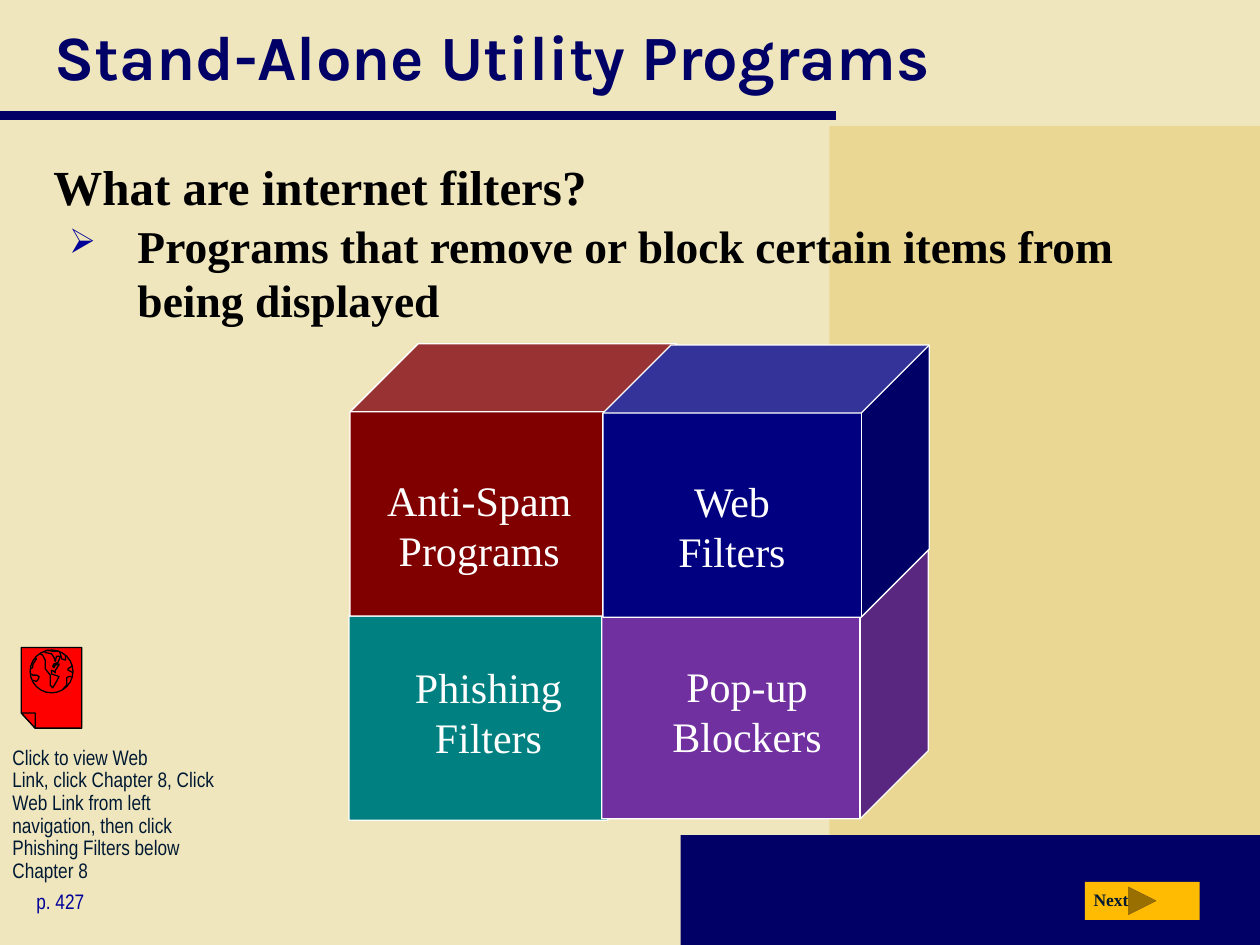
from dataclasses import dataclass

from lxml import etree
from pptx import Presentation
from pptx.dml.color import RGBColor
from pptx.enum.shapes import MSO_CONNECTOR, MSO_SHAPE
from pptx.enum.text import MSO_ANCHOR, PP_ALIGN
from pptx.oxml.ns import qn
from pptx.util import Pt

RECT, CUBE, OVAL = MSO_SHAPE.RECTANGLE, MSO_SHAPE.CUBE, MSO_SHAPE.OVAL
NEXT_BUTTON = MSO_SHAPE.ACTION_BUTTON_FORWARD_OR_NEXT
STRAIGHT = MSO_CONNECTOR.STRAIGHT
TOP, MIDDLE = MSO_ANCHOR.TOP, MSO_ANCHOR.MIDDLE
CENTER = PP_ALIGN.CENTER


@dataclass(frozen=True)
class Theme:
    cream: str = "F0E6BE"
    sand: str = "E9D793"
    navy: str = "000066"
    blue: str = "000099"
    ink: str = "001932"
    black: str = "000000"
    white: str = "FFFFFF"
    red: str = "FF0000"
    amber: str = "FFBA02"
    heading: str = "Karla"
    serif: str = "Times New Roman"
    narrow: str = "Arial Narrow"
    title: int = 36
    question: int = 28
    answer: int = 26
    label: int = 24
    note: int = 12
    button: int = 10


THEME = Theme()

# Icon coordinates, in hundredths of an inch from the sheet's corner
ICON_UNIT = Pt(0.72)
SHEET = [(0, 0), (48, 0), (48, 64), (11, 64), (0, 52)]
FOLD = [(0, 52), (11, 52), (11, 64)]
GLOBE = (5.04, 1.44, 24.48, 24.48)
COASTS = [
    [(7, 17), (9, 16), (9, 14), (10, 12), (12, 9), (11, 8)],
    [(8, 21), (9, 22), (12, 22), (14, 23), (14, 24), (13, 26), (12, 27), (9, 26)],
    [(33, 33), (36, 30), (36, 24), (38, 23), (40, 23)],
    [(41, 20), (39, 19), (37, 18), (37, 17), (40, 15), (40, 14)],
    [(20, 2), (25, 3), (30, 3), (31, 5), (32, 9), (35, 10), (35, 6)],
    [(18, 3), (19, 4), (24, 5), (26, 8), (27, 11), (28, 7), (31, 7), (30, 10),
     (29, 12), (26, 13), (25, 15), (26, 16), (27, 14), (30, 13), (30, 14),
     (29, 15), (28, 17), (27, 18), (27, 20), (26, 19), (24, 18), (24, 21),
     (30, 23), (28, 27), (25, 32), (23, 30), (23, 22), (20, 18), (19, 17),
     (19, 10), (17, 6), (15, 5)],
]


def rgb(colour):
    return RGBColor.from_string(colour)


def paint(shape, fill=None, line=None):
    shape.shadow.inherit = False
    if fill:
        shape.fill.solid()
        shape.fill.fore_color.rgb = rgb(fill)
    else:
        shape.fill.background()
    if line:
        shape.line.color.rgb = rgb(line)
        shape.line.width = Pt(0.75)
    else:
        shape.line.fill.background()
    return shape


def add_preset(page, kind, box, fill, line=None):
    return paint(page.shapes.add_shape(kind, *map(Pt, box)), fill, line)


def write(shape, text, font, size, colour, bold=False, align=None, anchor=TOP,
          wrap=True, top=3.6):
    """Fill a shape with text; a vertical tab in it is a line break."""
    frame = shape.text_frame
    frame.word_wrap = wrap
    frame.vertical_anchor = anchor
    frame.margin_top = Pt(top)
    frame.text = text
    for para in frame.paragraphs:
        para.alignment = align
        para.font.name, para.font.size = font, Pt(size)
        para.font.color.rgb, para.font.bold = rgb(colour), bold
    return frame.paragraphs[0]


def add_text(page, box, *args, **options):
    return write(page.shapes.add_textbox(*map(Pt, box)), *args, **options)


def add_bullet(para, mark, colour, percent, margin, hanging):
    props = para._p.get_or_add_pPr()
    props.set("marL", str(Pt(margin)))
    props.set("indent", str(-Pt(hanging)))
    tint = etree.SubElement(props, qn("a:buClr"))
    etree.SubElement(tint, qn("a:srgbClr"), val=colour)
    etree.SubElement(props, qn("a:buSzPct"), val=str(percent * 1000))
    etree.SubElement(props, qn("a:buChar"), char=mark)


def backdrop(page, box):
    left, top, width, height = box
    right, bottom = left + width, top + height
    page.background.fill.solid()
    page.background.fill.fore_color.rgb = rgb(THEME.cream)
    add_preset(page, RECT, (right - 246, top + 72, 246, height - 72), THEME.sand)
    add_preset(page, RECT, (right - 331, bottom - 62.8, 331, 62.8), THEME.navy)
    rule = page.shapes.add_connector(
        STRAIGHT, Pt(left), Pt(top + 66), Pt(left + 478), Pt(top + 66))
    rule.line.color.rgb = rgb(THEME.navy)
    rule.line.width = Pt(5)
    etree.SubElement(rule._element.spPr, qn("a:effectLst"))


def heading(page, box):
    add_text(page, box, "Stand-Alone Utility Programs", THEME.heading,
             THEME.title, THEME.navy, bold=True, anchor=MIDDLE)


def definition(page, box):
    left, top, width, height = box
    question = add_text(page, (left, top, width, 52.5), "What are internet filters?",
                        THEME.serif, THEME.question, THEME.black, bold=True)
    question.space_before = Pt(3.5)
    answer = add_text(
        page, (left, top + 35.3, width, height - 35.3),
        "Programs that remove or block certain items from being displayed",
        THEME.serif, THEME.answer, THEME.black, bold=True)
    answer.space_before = Pt(2.5)
    add_bullet(answer, "➢", THEME.blue, 75, margin=48, hanging=39)


def filter_cubes(page, box):
    """Stack four cubes two by two; the upper row is in front."""
    left, top, width, height = box
    side_x, side_y = 186.5, 155.5
    right, low = left + width - side_x, top + height - side_y
    style = dict(font=THEME.serif, size=THEME.label, colour=THEME.white,
                 align=CENTER, wrap=False)
    lower = [("Phishing\vFilters", left - 0.6, low, "008080", 30, 99.5),
             ("Pop-up\vBlockers", right - 0.6, low - 0.8, "7030A0", 30, 106)]
    for text, x, y, colour, inset, label_width in lower:
        add_preset(page, CUBE, (x, y, side_x, side_y), colour, THEME.white)
        add_text(page, (x + inset, y + 25.2, label_width, 127), text, top=39.6, **style)
    upper = [("Anti-Spam\nPrograms", left, top, "800000"),
             ("Web\vFilters", right, top + 0.7, "000080")]
    for text, x, y, colour in upper:
        cube = add_preset(page, CUBE, (x, y, side_x, side_y), colour, THEME.white)
        cube.text_frame.margin_bottom = 0
        write(cube, text, anchor=MIDDLE, top=12, **style)


def add_outline(page, left, top, points, fill=None, close=True):
    builder = page.shapes.build_freeform(*points[0], scale=ICON_UNIT)
    builder.add_line_segments(points[1:], close=close)
    paint(builder.convert_to_shape(Pt(left), Pt(top)), fill, THEME.black)


def web_link(page, box):
    left, top, width, height = box
    x, y = left + 12.2, top
    add_outline(page, x, y, SHEET, THEME.red)
    add_outline(page, x, y, FOLD, THEME.red)
    dx, dy, *size = GLOBE
    add_preset(page, OVAL, (x + dx, y + dy, *size), THEME.red, THEME.black)
    for coast in COASTS:
        add_outline(page, x, y, coast, close=False)
    note = add_text(
        page, (left, top + 53.4, width, height - 53.4),
        "Click to view Web\vLink, click Chapter 8, Click\vWeb Link from left\v"
        "navigation, then click\vPhishing Filters below\vChapter 8",
        THEME.narrow, THEME.note, THEME.ink)
    note.line_spacing = 0.9


def page_reference(page, box):
    add_text(page, box, "p. 427", THEME.narrow, THEME.note, THEME.blue)


def next_button(page, box):
    left, top, _, _ = box
    add_preset(page, NEXT_BUTTON, box, THEME.amber)
    add_text(page, (left - 2.2, top + 0.7, 36.7, 19.4), "Next", THEME.serif,
             THEME.button, THEME.ink, bold=True)


def main():
    deck = Presentation()
    deck.slide_width, deck.slide_height = Pt(720), Pt(540)
    page = deck.slides.add_slide(deck.slide_layouts[6])
    backdrop(page, (0, 0, 720, 540))
    heading(page, (24, 0, 676, 63.4))
    definition(page, (23.5, 85.7, 676, 126.7))
    filter_cubes(page, (200, 196.5, 331, 272.2))
    next_button(page, (620, 504, 65.5, 21.6))
    page_reference(page, (13.7, 504, 121.7, 21.6))
    web_link(page, (0, 370, 156.2, 101.6))
    deck.save("out.pptx")


if __name__ == "__main__":
    main()
